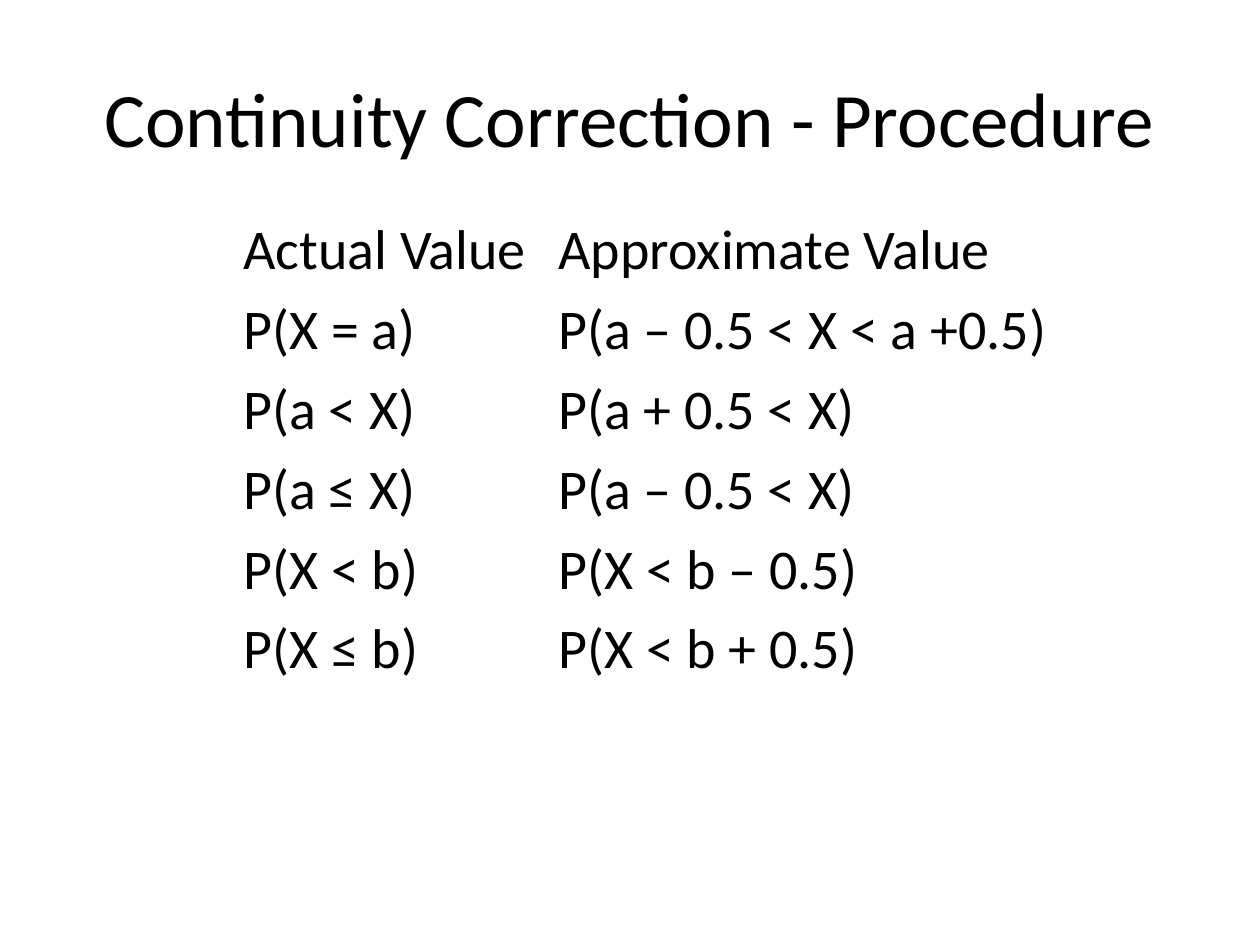
"""Build the continuity correction procedure slide."""
import dataclasses
import typing

import pptx
import pptx.dml.color
import pptx.enum.text
import pptx.util

PX = 914400 // 126


@dataclasses.dataclass(frozen=True)
class Theme:
    font: str = "Calibri"
    text: str = "000000"
    background: str = "FFFFFF"
    title_size: int = 44
    table_size: int = 32


class Correction(typing.NamedTuple):
    actual: str
    approximate: str


THEME = Theme()
COLUMN_WIDTHS = (315, 514)
ROW_HEIGHT = 52
TABLE_HEIGHT = 479
CORRECTIONS = (
    Correction("Actual Value", "Approximate Value"),
    Correction("P(X = a)", "P(a – 0.5 < X < a +0.5)"),
    Correction("P(a < X)", "P(a + 0.5 < X)"),
    Correction("P(a ≤ X)", "P(a – 0.5 < X)"),
    Correction("P(X < b)", "P(X < b – 0.5)"),
    Correction("P(X ≤ b)", "P(X < b + 0.5)"),
)


def px(n: int) -> int:
    return n * PX


def rgb(value: str) -> pptx.dml.color.RGBColor:
    return pptx.dml.color.RGBColor.from_string(value)


def write(tf, text: str, size: int) -> None:
    tf.text = text
    r = tf.paragraphs[0].runs[0]
    r.font.name = THEME.font
    r.font.size = pptx.util.Pt(size)
    r.font.color.rgb = rgb(THEME.text)


def add_title(s, text: str) -> None:
    sp = s.shapes.add_textbox(px(63), px(38), px(1134), px(158))
    tf = sp.text_frame
    tf.word_wrap = True
    tf.vertical_anchor = pptx.enum.text.MSO_ANCHOR.MIDDLE
    write(tf, text, THEME.title_size)
    tf.paragraphs[0].alignment = pptx.enum.text.PP_ALIGN.CENTER


def add_corrections(s, corrections: typing.Sequence[Correction]) -> None:
    frame = s.shapes.add_table(
        len(corrections), len(COLUMN_WIDTHS),
        px(231), px(210), px(sum(COLUMN_WIDTHS)), px(TABLE_HEIGHT),
    )
    table = frame.table
    table.first_row = False
    table.horz_banding = False
    for column, width in zip(table.columns, COLUMN_WIDTHS):
        column.width = px(width)
    for row, correction in zip(table.rows, corrections):
        row.height = px(ROW_HEIGHT)
        for cell, text in zip(row.cells, correction):
            cell.fill.background()
            write(cell.text_frame, text, THEME.table_size)
    frame.height = px(TABLE_HEIGHT)


def main() -> None:
    prs = pptx.Presentation()
    prs.slide_width = pptx.util.Inches(10)
    prs.slide_height = pptx.util.Inches(7.5)
    s = prs.slides.add_slide(prs.slide_layouts[6])
    s.background.fill.solid()
    s.background.fill.fore_color.rgb = rgb(THEME.background)
    add_title(s, "Continuity Correction - Procedure")
    add_corrections(s, CORRECTIONS)
    prs.save("out.pptx")


if __name__ == "__main__":
    main()
